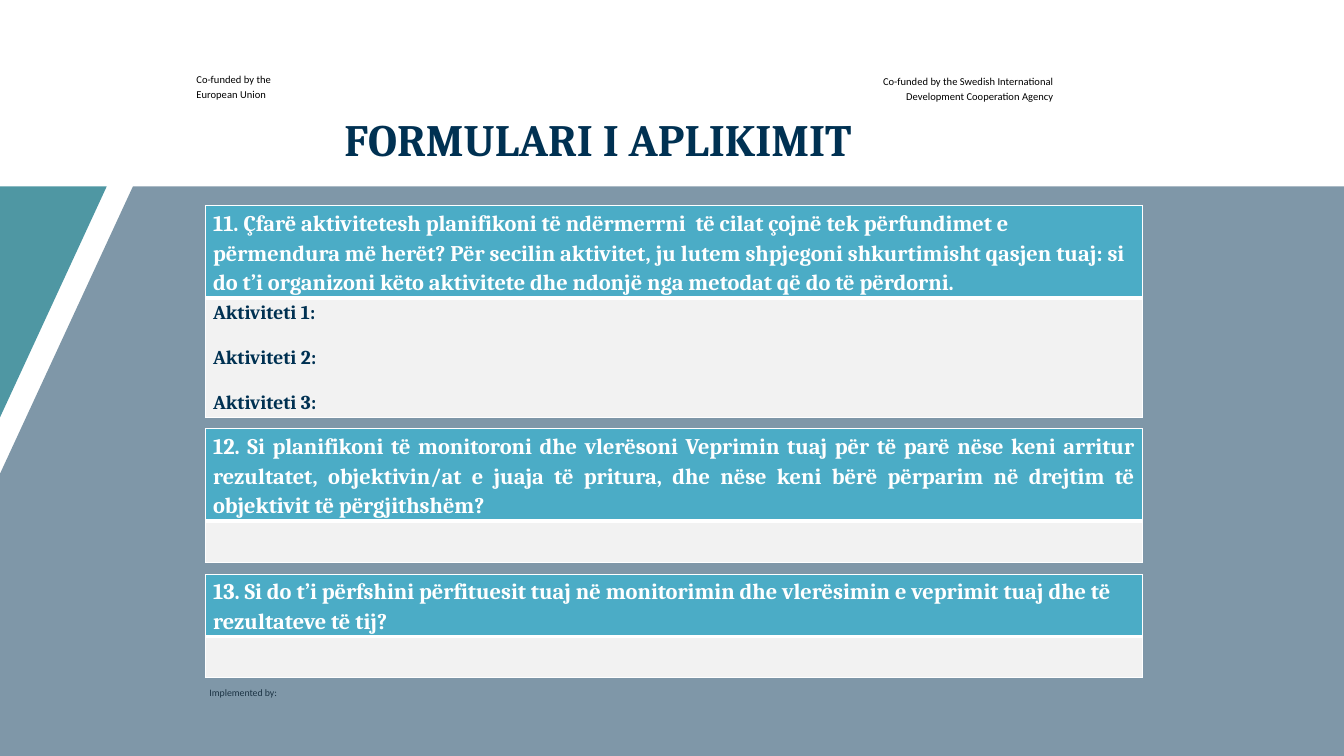
from dataclasses import dataclass
from lxml.etree import SubElement
from pptx import Presentation
from pptx.dml.color import RGBColor
from pptx.enum.text import MSO_ANCHOR, PP_ALIGN
from pptx.oxml.ns import qn
from pptx.util import Cm, Pt


@dataclass(frozen=True)
class Theme:
    navy: str = "003152"
    teal: str = "4F97A3"
    header: str = "4BACC6"
    body: str = "F2F2F2"
    white: str = "FFFFFF"
    black: str = "000000"
    grey: str = "373435"
    heading_font: str = "Cambria"
    label_font: str = "Calibri"
    title_size: float = 32
    question_size: float = 16
    answer_size: float = 14
    label_size: float = 7.5
    footer_size: float = 7


@dataclass(frozen=True)
class Style:
    font: str
    size: float
    color: str
    bold: bool = False
    align: PP_ALIGN = PP_ALIGN.LEFT
    spacing: float = 1.0


@dataclass(frozen=True)
class Label:
    text: str
    x: float
    y: float
    w: float
    h: float
    style: Style
    anchor: MSO_ANCHOR = MSO_ANCHOR.TOP


@dataclass(frozen=True)
class Question:
    text: str
    y: float
    header_h: float
    body_h: float
    align: PP_ALIGN = PP_ALIGN.LEFT
    answers: tuple[str, ...] = ()


T = Theme()
SLIDE_W, SLIDE_H = 33.87, 19.05
BAND_TOP = 4.7
TABLE_X, TABLE_W = 5.18, 23.62
CELL_MARGIN = 0.19

FOOTER = Style(T.label_font, T.footer_size, T.grey, align=PP_ALIGN.JUSTIFY)
FUNDER_LEFT = Style(T.label_font, T.label_size, T.black, spacing=1.15)
FUNDER_RIGHT = Style(T.label_font, T.label_size, T.black, align=PP_ALIGN.RIGHT, spacing=1.15)
TITLE = Style(T.heading_font, T.title_size, T.navy, True, PP_ALIGN.CENTER, 0.9)
ANSWER = Style(T.heading_font, T.answer_size, T.navy, True)

LABELS = [
    Label("Implemented by:", 5.28, 17.3, 3.61, 0.51, FOOTER),
    Label("Co-funded by the European Union", 4.95, 1.8, 2.59, 0.76, FUNDER_LEFT),
    Label("Co-funded by the Swedish International Development Cooperation Agency",
          21.79, 1.85, 4.75, 1.4, FUNDER_RIGHT),
    Label("FORMULARI I APLIKIMIT", 2.97, 2.46, 24.21, 2.24, TITLE, MSO_ANCHOR.MIDDLE),
]

QUESTIONS = [
    Question("11. Çfarë aktivitetesh planifikoni të ndërmerrni  të cilat çojnë tek përfundimet e "
             "përmendura më herët? Për secilin aktivitet, ju lutem shpjegoni shkurtimisht qasjen "
             "tuaj: si do t’i organizoni këto aktivitete dhe ndonjë nga metodat që do të përdorni.",
             5.18, 2.26, 3.0,
             answers=("Aktiviteti 1:", "Aktiviteti 2:", "Aktiviteti 3:")),
    Question("12. Si planifikoni të monitoroni dhe vlerësoni Veprimin tuaj për të parë nëse keni "
             "arritur rezultatet, objektivin/at e juaja të pritura, dhe nëse keni bërë përparim "
             "në drejtim të objektivit të përgjithshëm?",
             10.8, 2.26, 1.04, PP_ALIGN.JUSTIFY),
    Question("13. Si do t’i përfshini përfituesit tuaj në monitorimin dhe vlerësimin e veprimit "
             "tuaj dhe të rezultateve të tij?",
             14.48, 1.5, 1.04),
]


def write(tf, lines: tuple[str, ...], style: Style, gap: float = 0) -> None:
    for i, line in enumerate(lines):
        p = tf.add_paragraph() if i else tf.paragraphs[0]
        p.alignment = style.align
        p.line_spacing = style.spacing
        p.space_before = Pt(gap if i else 0)
        r = p.add_run()
        r.text = line
        r.font.name = style.font
        r.font.size = Pt(style.size)
        r.font.bold = style.bold
        r.font.color.rgb = RGBColor.from_string(style.color)


def add_label(s, label: Label) -> None:
    sp = s.shapes.add_textbox(Cm(label.x), Cm(label.y), Cm(label.w), Cm(label.h))
    tf = sp.text_frame
    tf.word_wrap = True
    tf.vertical_anchor = label.anchor
    tf.margin_left = tf.margin_right = tf.margin_top = tf.margin_bottom = 0
    write(tf, (label.text,), label.style)


def add_polygon(s, points: list[tuple[float, float]], color: str, alpha: int = 100) -> None:
    start, *rest = [(Cm(x), Cm(y)) for x, y in points]
    builder = s.shapes.build_freeform(*start)
    builder.add_line_segments(rest)
    sp = builder.convert_to_shape()
    sp.shadow.inherit = False
    sp.fill.solid()
    sp.fill.fore_color.rgb = RGBColor.from_string(color)
    sp.line.fill.background()
    if alpha < 100:
        clr = sp.fill._xPr.find(qn("a:solidFill"))[0]
        SubElement(clr, qn("a:alpha"), val=str(alpha * 1000))


def format_cell(cell, color: str, top: float, bottom: float) -> None:
    tcPr = cell._tc.get_or_add_tcPr()
    for side, width in (("L", 1), ("R", 1), ("T", top), ("B", bottom)):
        ln = SubElement(tcPr, qn(f"a:ln{side}"), w=str(Pt(width)))
        SubElement(SubElement(ln, qn("a:solidFill")), qn("a:srgbClr"), val=T.white)
    cell.fill.solid()
    cell.fill.fore_color.rgb = RGBColor.from_string(color)
    cell.vertical_anchor = MSO_ANCHOR.MIDDLE
    cell.margin_left = cell.margin_right = Cm(CELL_MARGIN)
    cell.margin_top = cell.margin_bottom = 0


def add_question(s, q: Question) -> None:
    frame = s.shapes.add_table(2, 1, Cm(TABLE_X), Cm(q.y), Cm(TABLE_W), Cm(q.header_h + q.body_h))
    table = frame.table
    table.rows[0].height = Cm(q.header_h)
    table.rows[1].height = Cm(q.body_h)
    header, body = table.cell(0, 0), table.cell(1, 0)
    format_cell(header, T.header, 1, 3)
    format_cell(body, T.body, 3, 1)
    style = Style(T.heading_font, T.question_size, T.white, True, q.align, 1.15)
    write(header.text_frame, (q.text,), style)
    write(body.text_frame, q.answers, ANSWER, gap=16)


def main() -> None:
    prs = Presentation()
    prs.slide_width, prs.slide_height = Cm(SLIDE_W), Cm(SLIDE_H)
    s = prs.slides.add_slide(prs.slide_layouts[6])
    for label in LABELS:
        add_label(s, label)
    add_polygon(s, [(3.35, BAND_TOP), (SLIDE_W, BAND_TOP), (SLIDE_W, SLIDE_H),
                    (0, SLIDE_H), (0, 11.94)], T.navy, 50)
    add_polygon(s, [(0, BAND_TOP), (2.69, BAND_TOP), (0, 10.52)], T.teal)
    for q in QUESTIONS:
        add_question(s, q)
    prs.save("out.pptx")


if __name__ == "__main__":
    main()
